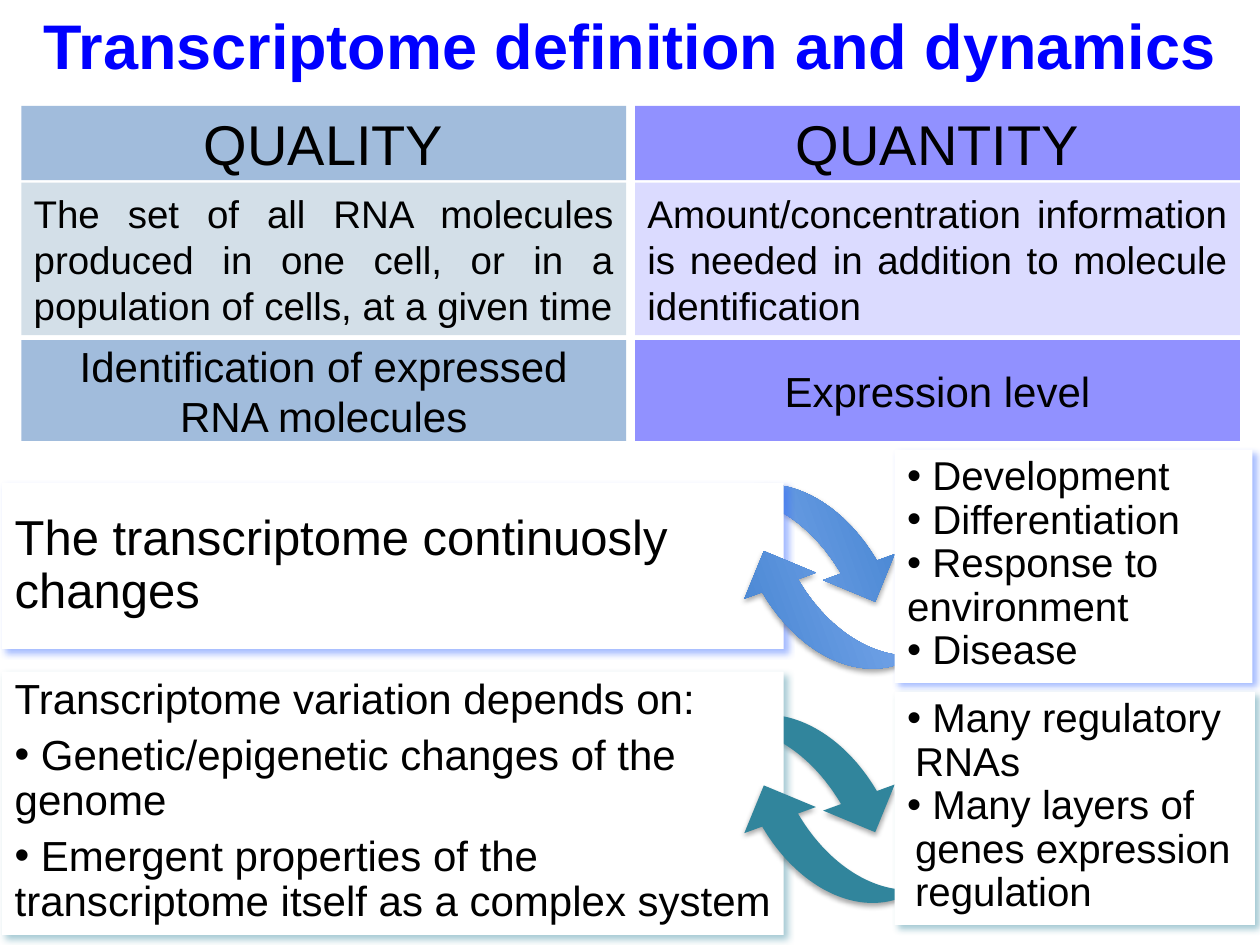
from lxml.etree import SubElement
from pptx import Presentation
from pptx.dml.color import RGBColor
from pptx.enum.shapes import MSO_SHAPE
from pptx.enum.text import MSO_ANCHOR, MSO_AUTO_SIZE, PP_ALIGN
from pptx.oxml.ns import qn
from pptx.util import Pt

FONT = "Arial"
BLUE_GRADIENT = ("3F80CE", "A4C4FF")
TEAL = "31859C"


def rgb(value):
    return RGBColor.from_string(value)


def place(shape, left, top, width, height):
    shape.left, shape.top = Pt(left), Pt(top)
    shape.width, shape.height = Pt(width), Pt(height)


def paint(shape, color, opacity=100):
    shape.shadow.inherit = False
    shape.line.fill.background()
    if isinstance(color, tuple):
        shape.fill.gradient()
        shape.fill.gradient_angle = 90
        for stop, stop_color in zip(shape.fill.gradient_stops, color):
            stop.color.rgb = rgb(stop_color)
        return
    shape.fill.solid()
    shape.fill.fore_color.rgb = rgb(color)
    if opacity < 100:
        fill_color = shape.element.spPr.find(qn("a:solidFill"))[0]
        SubElement(fill_color, qn("a:alpha"), val=str(opacity * 1000))


def add_shadow(shape, color, opacity, blur, distance, angle):
    effects = shape.element.spPr.find(qn("a:effectLst"))
    shadow = SubElement(
        effects, qn("a:outerShdw"), blurRad=str(Pt(blur)), dist=str(Pt(distance)),
        dir=str(angle * 60000), algn="ctr", rotWithShape="0")
    shadow_color = SubElement(shadow, qn("a:srgbClr"), val=color)
    SubElement(shadow_color, qn("a:alpha"), val=str(opacity * 1000))


def style_font(font, size, color="000000", bold=False):
    font.name, font.size, font.bold = FONT, Pt(size), bold
    font.color.rgb = rgb(color)


def add_rectangle(page, left, top, width, height, color, opacity=100):
    shape = page.shapes.add_shape(
        MSO_SHAPE.RECTANGLE, Pt(left), Pt(top), Pt(width), Pt(height))
    paint(shape, color, opacity)
    return shape


def set_title(page, text, left, top, width, height):
    title = page.shapes.title
    place(title, left, top, width, height)
    frame = title.text_frame
    frame.text = text
    frame.auto_size = MSO_AUTO_SIZE.NONE
    frame.vertical_anchor = MSO_ANCHOR.MIDDLE
    para = frame.paragraphs[0]
    para.alignment = PP_ALIGN.CENTER
    style_font(para.runs[0].font, 36, "0000FF", True)


def add_column(page, left, top, width, texts, strong, light):
    heights, gaps = (42.5, 87.1, 57.6), (1.4, 2.9, 0)
    sizes = (32, 22, 24)
    aligns = (PP_ALIGN.CENTER, PP_ALIGN.JUSTIFY, PP_ALIGN.CENTER)
    fills = (strong, light, strong)
    for text, height, gap, size, align, fill in zip(
            texts, heights, gaps, sizes, aligns, fills):
        cell = add_rectangle(page, left, top, width, height, *fill)
        frame = cell.text_frame
        frame.word_wrap = True
        frame.vertical_anchor = MSO_ANCHOR.MIDDLE
        frame.text = text
        para = frame.paragraphs[0]
        para.alignment = align
        style_font(para.runs[0].font, size)
        top += height + gap


def add_curved_arrow(page, left, top, color, flip):
    arrow = page.shapes.add_shape(
        MSO_SHAPE.CURVED_RIGHT_ARROW, Pt(left), Pt(top), Pt(87.1), Pt(156.2))
    arrow.rotation = 70
    arrow.element.spPr.find(qn("a:xfrm")).set(flip, "1")
    paint(arrow, color)
    add_shadow(arrow, "000000", 35, 3.1, 1.8, 90)


def fill_panel(panel, box, lines, size, shadow_color, anchor=MSO_ANCHOR.TOP,
               space_after=0, hanging=0):
    panel.element.getparent().append(panel.element)
    place(panel, *box)
    paint(panel, "FFFFFF")
    add_shadow(panel, shadow_color, 43, 4, 3, 45)
    frame = panel.text_frame
    frame.word_wrap = True
    frame.margin_right = Pt(4)
    frame.auto_size = MSO_AUTO_SIZE.NONE
    frame.vertical_anchor = anchor
    frame.text = "\n".join(lines)
    for para, line in zip(frame.paragraphs, lines):
        para.alignment = PP_ALIGN.LEFT
        para.line_spacing = 0.9
        para.space_before, para.space_after = Pt(0), Pt(space_after)
        properties = para._p.get_or_add_pPr()
        properties.set("marL", str(Pt(hanging)))
        properties.set("indent", str(-Pt(hanging)))
        if line.startswith(" "):
            SubElement(properties, qn("a:buFont"), typeface=FONT)
            SubElement(properties, qn("a:buChar"), char="•")
        else:
            SubElement(properties, qn("a:buNone"))
        for span in para.runs:
            style_font(span.font, size)


def add_change_row(page, panels):
    add_curved_arrow(page, 388.8, 244.1, BLUE_GRADIENT, "flipV")
    add_rectangle(page, 320.4, 343.4, 78.5, 53.3, "FFFFFF")
    fill_panel(panels[1], (1.2, 275.8, 446.6, 95),
               ["The transcriptome continuosly changes"],
               28, "3366FF", MSO_ANCHOR.MIDDLE, space_after=6)
    add_curved_arrow(page, 460.8, 258.5, BLUE_GRADIENT, "flipH")
    fill_panel(panels[2], (511.2, 257, 204.5, 133.2),
               [" Development", " Differentiation", " Response to environment",
                " Disease"], 23, "3366FF")


def add_variation_row(page, panels):
    fill_panel(panels[3], (1.2, 383.8, 446.6, 150.5),
               ["Transcriptome variation depends on:",
                " Genetic/epigenetic changes of the genome",
                " Emergent properties of the transcriptome itself as a complex system"],
               24, TEAL, space_after=6)
    add_curved_arrow(page, 460.8, 392.4, TEAL, "flipH")
    fill_panel(panels[4], (511.2, 395.3, 205.9, 133.2),
               [" Many regulatory RNAs", " Many layers of genes expression regulation"],
               23, TEAL, hanging=4.5)


def main():
    deck = Presentation()
    deck.slide_width, deck.slide_height = Pt(720), Pt(540)
    page = deck.slides.add_slide(deck.slide_layouts.get_by_name("Comparison"))
    panels = {panel.placeholder_format.idx: panel for panel in page.placeholders}

    set_title(page, "Transcriptome definition and dynamics", 0, 0, 720, 51.1)
    add_column(page, 12.2, 60.5, 345.6,
               ("QUALITY",
                "The set of all RNA molecules produced in one cell, or in a "
                "population of cells, at a given time",
                "Identification of expressed RNA molecules"),
               ("4F81BD", 53), ("25608D", 20))
    add_column(page, 362.9, 60.5, 345.6,
               ("QUANTITY",
                "Amount/concentration information is needed in addition to "
                "molecule identification",
                "Expression level"),
               ("0000FF", 43), ("0000FF", 14))
    add_curved_arrow(page, 388.8, 375.8, TEAL, "flipV")
    add_change_row(page, panels)
    add_variation_row(page, panels)
    deck.save("out.pptx")


if __name__ == "__main__":
    main()
